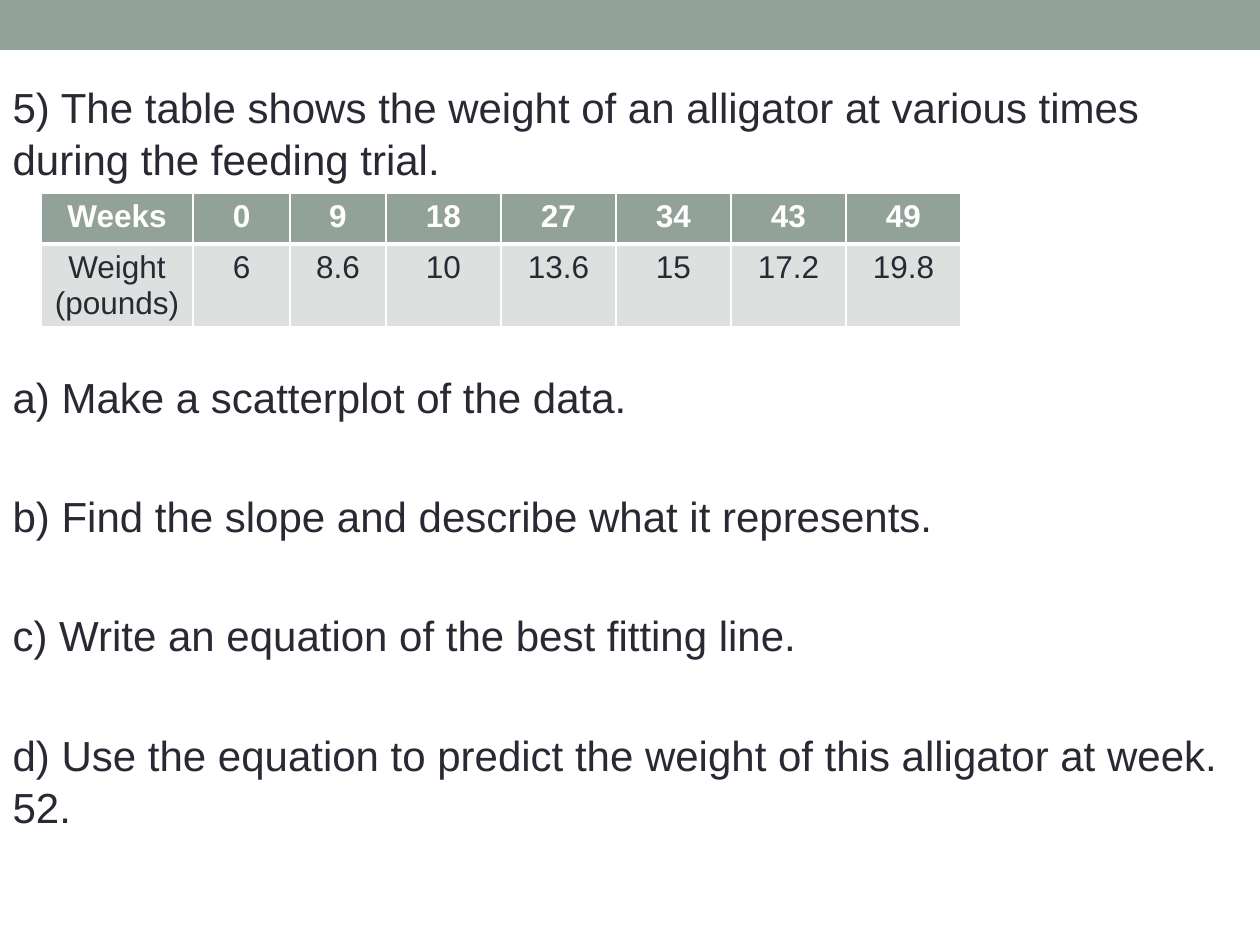
from lxml.etree import SubElement
from pptx import Presentation
from pptx.dml.color import RGBColor
from pptx.enum.shapes import MSO_SHAPE
from pptx.enum.text import MSO_AUTO_SIZE, MSO_ANCHOR, PP_ALIGN
from pptx.oxml.ns import qn
from pptx.util import Pt

PX = 914400 / 126
SAGE, PALE, INK, WHITE = "93A299", "DCE0DE", "292934", "FFFFFF"


def px(count):
    return round(count * PX)


def add_run(paragraph, text, size, color, bold=False):
    run = paragraph.add_run()
    run.text = text
    run.font.name = "Arial"
    run.font.size = Pt(size)
    run.font.bold = bold
    run.font.color.rgb = RGBColor.from_string(color)


presentation = Presentation()
presentation.slide_width = px(1260)
presentation.slide_height = px(945)
slide = presentation.slides.add_slide(presentation.slide_layouts[1])
title = slide.shapes.title.element
title.getparent().remove(title)

questions = slide.placeholders[1]
questions.left, questions.top = px(0), px(73)
questions.width, questions.height = px(1260), px(872)
frame = questions.text_frame
frame.word_wrap = True
frame.auto_size = MSO_AUTO_SIZE.NONE
frame.vertical_anchor = MSO_ANCHOR.TOP
lines = [
    ("5) The table shows the weight of an alligator at various times during the feeding trial.", 3),
    ("a) Make a scatterplot of the data.", 185),
    ("b) Find the slope and describe what it represents.", 67),
    ("c) Write an equation of the best fitting line.", 67),
    ("d) Use the equation to predict the weight of this alligator at week. 52.", 67),
]
for index, (text, gap) in enumerate(lines):
    paragraph = frame.add_paragraph() if index else frame.paragraphs[0]
    paragraph.space_before = px(gap)
    paragraph.line_spacing = 1.04
    properties = paragraph._p.get_or_add_pPr()
    properties.set("marL", "0")
    properties.set("indent", "0")
    SubElement(properties, qn("a:buNone"))
    add_run(paragraph, text, 24, INK)

band = slide.shapes.add_shape(MSO_SHAPE.RECTANGLE, px(0), px(0), px(1260), px(50))
band.shadow.inherit = False
band.fill.solid()
band.fill.fore_color.rgb = RGBColor.from_string(SAGE)
band.line.fill.background()

rows = [
    ["Weeks", "0", "9", "18", "27", "34", "43", "49"],
    ["Weight (pounds)", "6", "8.6", "10", "13.6", "15", "17.2", "19.8"],
]
widths = [152, 97, 96] + [115] * 5
heights = [51, 82]
styles = [(SAGE, WHITE, True, 1, 3), (PALE, INK, False, 3, 1)]
table = slide.shapes.add_table(
    len(rows), len(widths), px(41), px(193), px(sum(widths)), px(sum(heights))
).table
for column, width in zip(table.columns, widths):
    column.width = px(width)
for row, height, values, style in zip(table.rows, heights, rows, styles):
    row.height = px(height)
    fill, color, bold, top, bottom = style
    for cell, value in zip(row.cells, values):
        paragraph = cell.text_frame.paragraphs[0]
        paragraph.alignment = PP_ALIGN.CENTER
        add_run(paragraph, value, 18, color, bold)
        properties = cell._tc.get_or_add_tcPr()
        for side, points in (("L", 1), ("R", 1), ("T", top), ("B", bottom)):
            border = SubElement(properties, qn(f"a:ln{side}"), w=str(Pt(points)))
            paint = SubElement(border, qn("a:solidFill"))
            SubElement(paint, qn("a:srgbClr"), val=WHITE)
        cell.fill.solid()
        cell.fill.fore_color.rgb = RGBColor.from_string(fill)

presentation.save("out.pptx")
